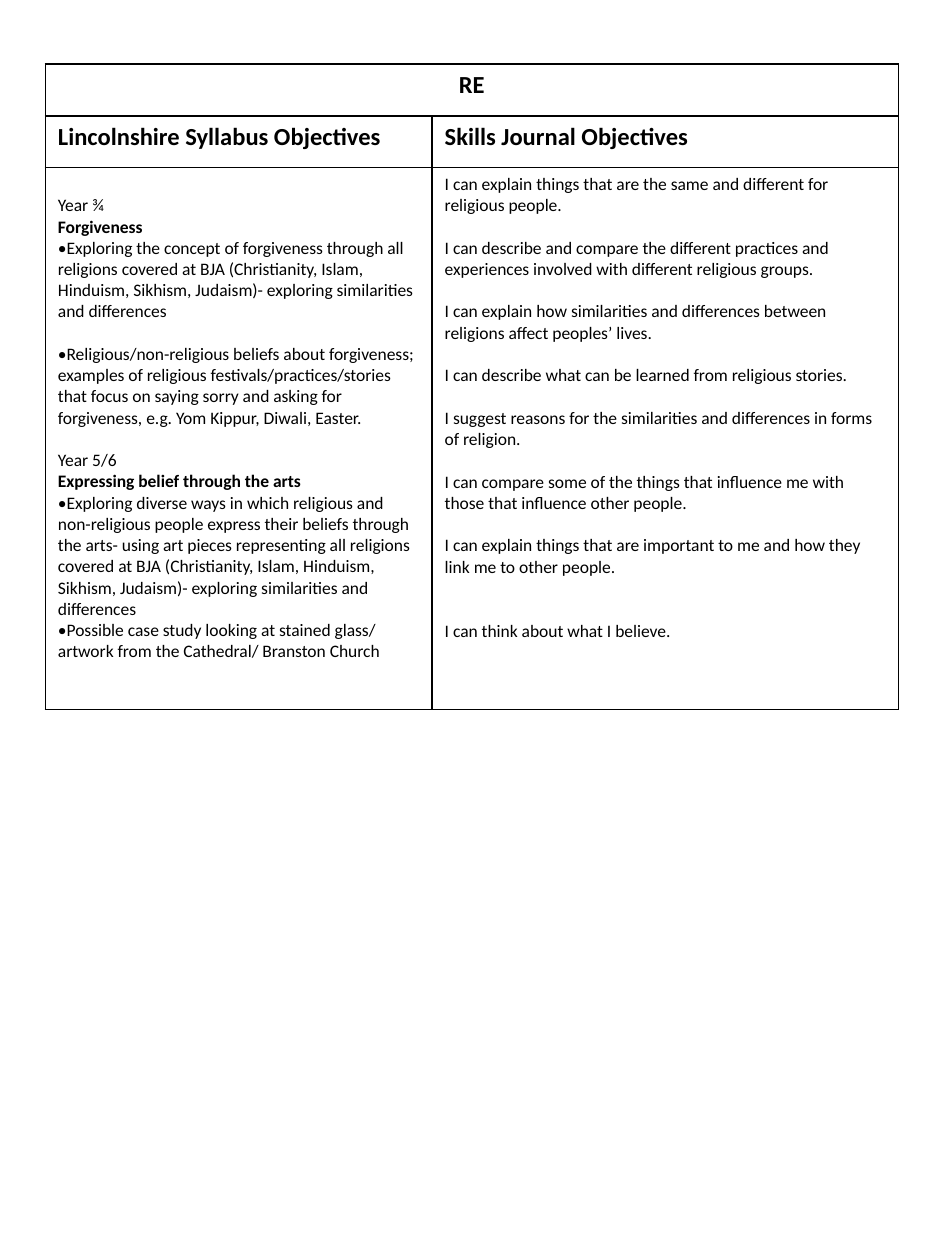
from lxml import etree
from pptx import Presentation
from pptx.dml.color import RGBColor
from pptx.enum.text import PP_ALIGN
from pptx.oxml.ns import qn
from pptx.util import Inches, Pt

CENTER, LEFT = PP_ALIGN.CENTER, PP_ALIGN.LEFT

THEME = {"font": "Calibri", "ink": "000000", "heading": 14, "body": 10,
         "line": 12.2, "border": 1}

TITLE = "RE"
HEADINGS = ["Lincolnshire Syllabus Objectives", "Skills Journal Objectives"]

# Each paragraph: text, bold, blank lines of space before it
SYLLABUS = [
    ("Year ¾", False, 0),
    ("Forgiveness", True, 0),
    ("•Exploring the concept of forgiveness through all religions covered at BJA "
     "(Christianity, Islam, Hinduism, Sikhism, Judaism)- exploring similarities "
     "and differences", False, 0),
    ("•Religious/non-religious beliefs about forgiveness; examples of religious "
     "festivals/practices/stories that focus on saying sorry and asking for "
     "forgiveness, e.g. Yom Kippur, Diwali, Easter.", False, 1),
    ("Year 5/6", False, 1),
    ("Expressing belief through the arts", True, 0),
    ("•Exploring diverse ways in which religious and non-religious people express "
     "their beliefs through the arts- using art pieces representing all religions "
     "covered at BJA (Christianity, Islam, Hinduism, Sikhism, Judaism)- exploring "
     "similarities and differences", False, 0),
    ("•Possible case study looking at stained glass/ artwork from the Cathedral/ "
     "Branston Church", False, 0),
]
SKILLS = [
    ("I can explain things that are the same and different for religious people.", False, 0),
    ("I can describe and compare the different practices and experiences involved "
     "with different religious groups.", False, 1),
    ("I can explain how similarities and differences between religions affect "
     "peoples’ lives.", False, 1),
    ("I can describe what can be learned from religious stories.", False, 1),
    ("I suggest reasons for the similarities and differences in forms of religion.", False, 1),
    ("I can compare some of the things that influence me with those that influence "
     "other people.", False, 1),
    ("I can explain things that are important to me and how they link me to other "
     "people.", False, 1),
    ("I can think about what I believe.", False, 2),
]

LEFT_EDGE, TOP_EDGE = 0.36, 0.51
COLUMNS = [3.07, 3.7]
ROWS = [0.41, 0.41, 4.3]


def add_borders(cell):
    """Draw a solid line on each side of a cell."""
    tc_pr = cell._tc.get_or_add_tcPr()
    for side in ("a:lnL", "a:lnR", "a:lnT", "a:lnB"):
        ln = etree.SubElement(tc_pr, qn(side), w=str(Pt(THEME["border"])))
        fill = etree.SubElement(ln, qn("a:solidFill"))
        etree.SubElement(fill, qn("a:srgbClr"), val=THEME["ink"])


def write(cell, paragraphs, size, align=LEFT):
    """Fill a cell with paragraphs of text, weight and space before."""
    tf = cell.text_frame
    for i, (text, bold, gap) in enumerate(paragraphs):
        p = tf.add_paragraph() if i else tf.paragraphs[0]
        p.alignment = align
        p.space_before = Pt(gap * THEME["line"])
        r = p.add_run()
        r.text = text
        formats = {"name": THEME["font"], "size": Pt(size), "bold": bold}
        for name, value in formats.items():
            setattr(r.font, name, value)
        r.font.color.rgb = RGBColor.from_string(THEME["ink"])


def main():
    """Build the objectives slide."""
    prs = Presentation()
    prs.slide_width, prs.slide_height = Inches(7.5), Inches(10)
    s = prs.slides.add_slide(prs.slide_layouts[6])
    table = s.shapes.add_table(
        len(ROWS), len(COLUMNS), Inches(LEFT_EDGE), Inches(TOP_EDGE),
        Inches(sum(COLUMNS)), Inches(sum(ROWS))).table
    table.first_row = table.horz_banding = False
    for column, width in zip(table.columns, COLUMNS):
        column.width = Inches(width)
    for row, height in zip(table.rows, ROWS):
        row.height = Inches(height)
    for cell in table.iter_cells():
        add_borders(cell)
        cell.fill.background()

    table.cell(0, 0).merge(table.cell(0, 1))
    write(table.cell(0, 0), [(TITLE, True, 0)], THEME["heading"], CENTER)
    for i, (heading, body) in enumerate(zip(HEADINGS, (SYLLABUS, SKILLS))):
        write(table.cell(1, i), [(heading, True, 0)], THEME["heading"])
        write(table.cell(2, i), body, THEME["body"])
    table.cell(2, 0).margin_top = Inches(0.22)
    prs.save("out.pptx")


if __name__ == "__main__":
    main()
